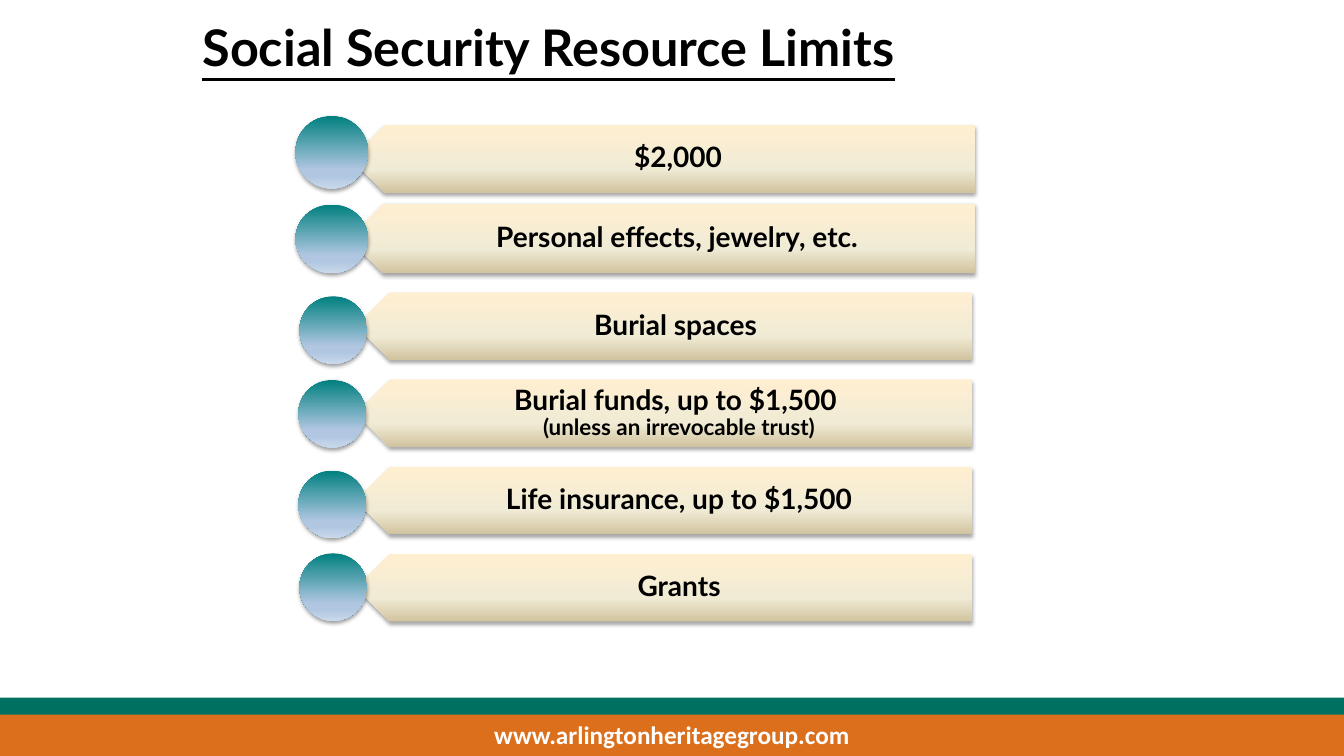
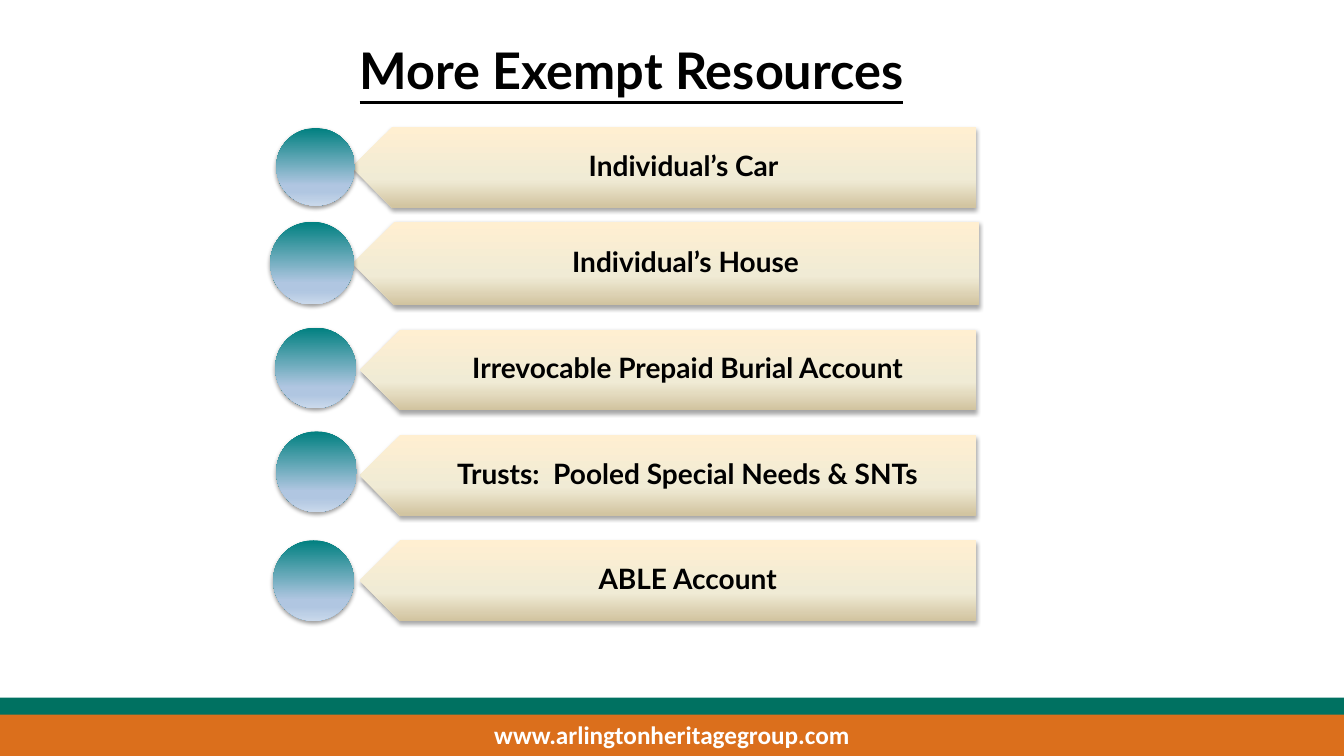
from lxml.etree import SubElement
from pptx import Presentation
from pptx.dml.color import RGBColor
from pptx.enum.shapes import MSO_SHAPE as SHAPE
from pptx.enum.text import MSO_ANCHOR as ANCHOR, PP_ALIGN as ALIGN
from pptx.oxml.ns import qn
from pptx.util import Inches, Pt

ORANGE, GREEN, WHITE, BLACK = "DB6F1C", "007161", "FFFFFF", "000000"
SAND = [(0, "FFEFD1"), (65, "F0EBD5"), (100, "D1C39F")]
TEAL = [(0, "008080"), (74, "B0C6E1"), (83, "B0C6E1"), (100, "CAD9EB")]
PLATE_SHADOW = {"alpha": 35, "blur": 3.1, "dist": 1.8}
DISC_SHADOW = {"alpha": 38, "blur": 3.1, "dist": 1.6}

TITLE = {"size": Pt(36), "name": "Lato", "bold": True, "underline": True}
LABEL = {"size": Pt(20), "name": "Lato", "bold": True}
NOTE = LABEL | {"size": Pt(16)}
FOOTER = {"size": Pt(18), "name": "Calibri", "bold": True}

LIMITS = [
    (["$2,000"], (3.48, 1.24, 6.19, 0.67), (2.93, 1.15, 0.72, 0.72)),
    (["Personal effects, jewelry, etc."], (3.46, 2.02, 6.21, 0.69), (2.93, 2.03, 0.72, 0.68)),
] + [
    (lines, (3.53, 2.9 + 0.865 * i, 6.11, 0.67), (x, y, 0.67, 0.67))
    for i, (lines, x, y) in enumerate([
        (["Burial spaces "], 2.97, 2.94),
        (["Burial funds, up to $1,500 ", "(unless an irrevocable trust)"], 2.96, 3.77),
        (["Life insurance, up to $1,500"], 2.96, 4.67),
        (["Grants"], 2.97, 5.49),
    ])
]
EXEMPT = [
    (["Individual’s Car"], (3.49, 1.26, 6.19, 0.8), (2.74, 1.27, 0.78, 0.77)),
    (["Individual’s House"], (3.5, 2.2, 6.21, 0.83), (2.68, 2.2, 0.83, 0.82)),
] + [
    (lines, (3.57, 3.27 + 1.045 * i, 6.11, 0.8), (x, y, 0.8, 0.8))
    for i, (lines, x, y) in enumerate([
        (["Irrevocable Prepaid Burial Account"], 2.73, 3.25),
        (["Trusts:  Pooled Special Needs & SNTs"], 2.74, 4.28),
        (["ABLE Account"], 2.71, 5.36),
    ])
]


def rgb(value):
    return RGBColor.from_string(value)


def inches(box):
    return [Inches(v) for v in box]


def set_attrs(obj, values):
    for key, value in values.items():
        setattr(obj, key, value)


def add_run(p, text, style, color=BLACK):
    r = p.add_run()
    r.text = text
    set_attrs(r.font, style)
    r.font.color.rgb = rgb(color)


def add_preset(slide, kind, box):
    s = slide.shapes.add_shape(kind, *inches(box))
    s.shadow.inherit = False
    s.line.fill.background()
    return s


def add_color(parent, value):
    return SubElement(parent, qn("a:srgbClr"), val=value)


def add_gradient(s, stops):
    s.fill.gradient()
    s.fill.gradient_angle = 270
    gs_list = s._element.spPr.find(qn("a:gradFill")).find(qn("a:gsLst"))
    for gs in list(gs_list):
        gs_list.remove(gs)
    for pos, color in stops:
        add_color(SubElement(gs_list, qn("a:gs"), pos=str(pos * 1000)), color)


def add_shadow(s, alpha, blur, dist):
    effects = s._element.spPr.find(qn("a:effectLst"))
    shadow = SubElement(effects, qn("a:outerShdw"), blurRad=str(Pt(blur)),
                        dist=str(Pt(dist)), dir="5400000", rotWithShape="0")
    SubElement(add_color(shadow, BLACK), qn("a:alpha"), val=str(alpha * 1000))


def add_text_box(slide, box, **frame):
    tf = slide.shapes.add_textbox(*inches(box)).text_frame
    set_attrs(tf, {"word_wrap": True} | frame)
    return tf.paragraphs[0]


def add_title(slide, text, box, align):
    p = add_text_box(slide, box)
    p.alignment = align
    add_run(p, text, TITLE)


def add_label(slide, lines, plate, indent, inset):
    x, y, w, h = plate
    p = add_text_box(slide, (x + indent, y, w - indent, h),
                     vertical_anchor=ANCHOR.MIDDLE,
                     margin_left=Inches(inset), margin_right=Inches(0.16),
                     margin_top=Inches(0.08), margin_bottom=Inches(0.08))
    set_attrs(p, {"alignment": ALIGN.CENTER, "line_spacing": 0.9})
    add_run(p, lines[0], LABEL)
    for line in lines[1:]:
        p.add_line_break()
        add_run(p, line, NOTE)


def add_row(slide, lines, plate, disc, indent, inset):
    s = add_preset(slide, SHAPE.PENTAGON, plate)
    s._element.spPr.find(qn("a:xfrm")).set("flipH", "1")
    add_gradient(s, SAND)
    add_shadow(s, **PLATE_SHADOW)
    add_label(slide, lines, plate, indent, inset)
    s = add_preset(slide, SHAPE.OVAL, disc)
    add_gradient(s, TEAL)
    add_shadow(s, **DISC_SHADOW)


def add_band(slide, top, height, color):
    s = add_preset(slide, SHAPE.RECTANGLE, (0, top, 13.33, height))
    s.fill.solid()
    s.fill.fore_color.rgb = rgb(color)
    return s


def add_footer(slide):
    s = add_band(slide, 7.08, 0.42, ORANGE)
    tf = s.text_frame
    tf.vertical_anchor = ANCHOR.MIDDLE
    p = tf.paragraphs[0]
    p.alignment = ALIGN.CENTER
    add_run(p, "www.arlingtonheritagegroup.com", FOOTER, WHITE)
    bands = [s, add_band(slide, 6.92, 0.17, GREEN)]
    for band in bands:
        slide.slide_layout.shapes._spTree.append(band._element)


def add_rows(slide, rows, indent, inset):
    for lines, plate, disc in rows:
        add_row(slide, lines, plate, disc, indent, inset)


def main():
    prs = Presentation()
    prs.slide_width, prs.slide_height = inches((13.33, 7.5))
    blank = prs.slide_layouts[6]

    slide = prs.slides.add_slide(blank)
    add_footer(slide)
    add_title(slide, "Social Security Resource Limits", (1.91, 0.11, 9.28, 0.71), ALIGN.LEFT)
    add_rows(slide, LIMITS, 0.17, 0.29)

    slide = prs.slides.add_slide(blank)
    add_title(slide, "More Exempt Resources", (2.38, 0.34, 7.77, 1.31), ALIGN.CENTER)
    add_rows(slide, EXEMPT, 0.2, 0.35)

    prs.save("out.pptx")


if __name__ == "__main__":
    main()
